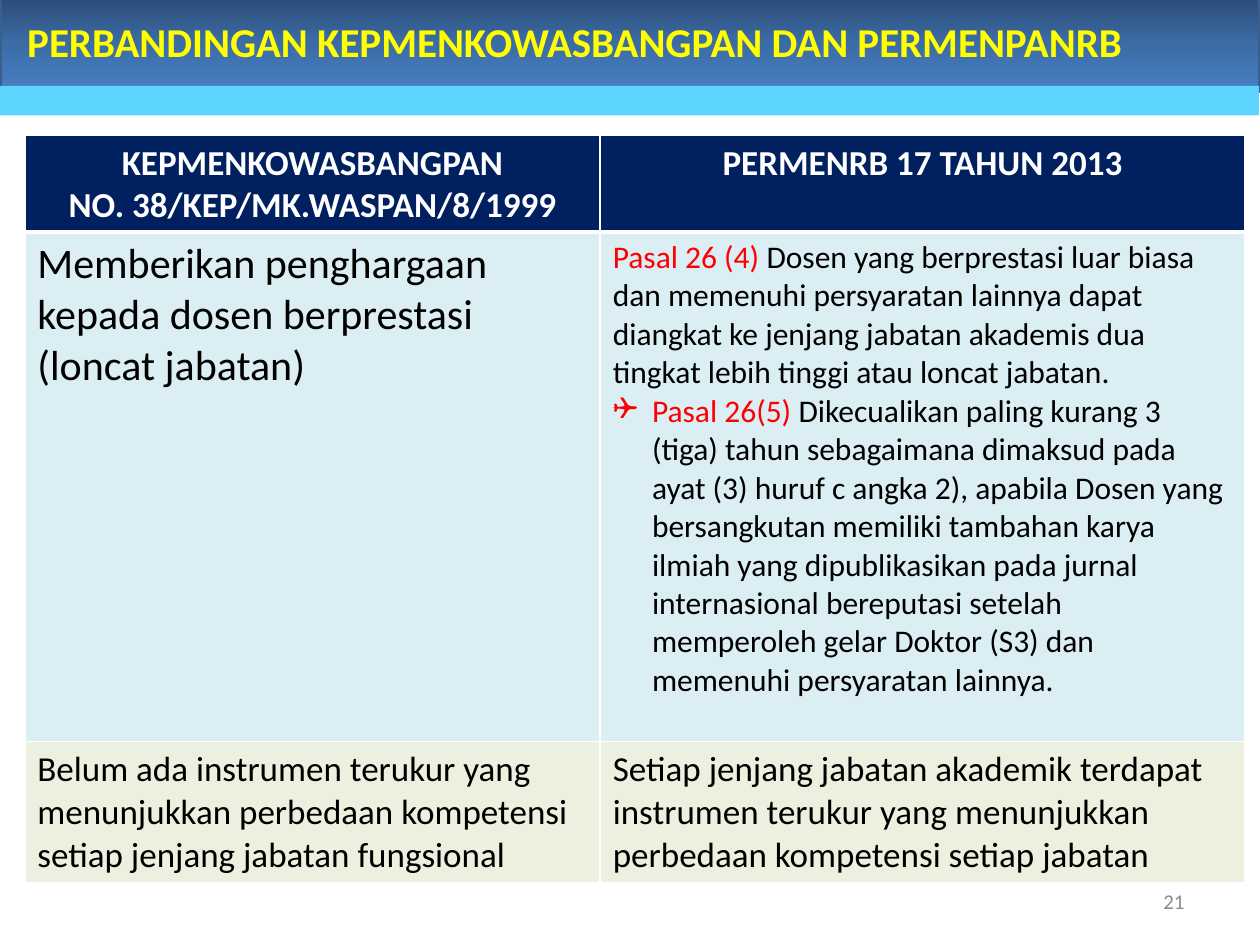
from copy import deepcopy
from dataclasses import dataclass

from lxml import etree
from pptx import Presentation
from pptx.dml.color import RGBColor
from pptx.enum import shapes, text
from pptx.oxml.ns import qn
from pptx.util import Cm, Pt


@dataclass(frozen=True)
class Theme:
    font: str = "Calibri"
    white: str = "FFFFFF"
    black: str = "000000"
    red: str = "FF0000"
    yellow: str = "FFFF00"
    gray: str = "8C8C8C"
    navy: str = "002060"
    blue: str = "DBEEF4"
    green: str = "EBF1DE"
    cyan: str = "5DD5FF"
    edge: str = "3A5F8C"
    fade: tuple = ("2A4C75", "3C6CA6", "4780C5")
    title: float = 23.4
    large: int = 24
    body: int = 20
    small: int = 18
    note: int = 12


T = Theme()
rgb = RGBColor.from_string


def write(frame, paras, size=T.body, color=T.black, bold=False,
          align=text.PP_ALIGN.LEFT, anchor=text.MSO_ANCHOR.TOP):
    """Fill a frame; each paragraph is a list of (words, colour or None)."""
    frame.word_wrap = True
    frame.vertical_anchor = anchor
    for i, parts in enumerate(paras):
        para = frame.paragraphs[0] if i == 0 else frame.add_paragraph()
        para.alignment = align
        for words, tint in parts:
            run = para.add_run()
            run.text = words
            run.font.name = T.font
            run.font.size = Pt(size)
            run.font.bold = bold
            run.font.color.rgb = rgb(tint or color)


def border(cell, widths):
    """Draw white cell edges; widths maps a side (L, R, T, B) to points."""
    props = cell._tc.get_or_add_tcPr()
    for n, (side, width) in enumerate(widths.items()):
        line = etree.Element(qn(f"a:ln{side}"), w=str(Pt(width)))
        fill = etree.SubElement(line, qn("a:solidFill"))
        etree.SubElement(fill, qn("a:srgbClr"), val=T.white)
        props.insert(n, line)


deck = Presentation()
deck.slide_width, deck.slide_height = Cm(25.4), Cm(19.05)
slide = deck.slides.add_slide(deck.slide_layouts[6])
rect = shapes.MSO_SHAPE.RECTANGLE

# Title banner and the stripe under it
banner = slide.shapes.add_shape(rect, 0, Cm(-0.08), Cm(25.4), Cm(1.93))
banner.shadow.inherit = False
banner.fill.gradient()
banner.fill.gradient_angle = 270
stops = banner.fill._fill._gradFill.find(qn("a:gsLst"))
stops.insert(1, deepcopy(stops[0]))
for stop, place, tint in zip(banner.fill.gradient_stops, (0, 0.5, 1), T.fade):
    stop.position = place
    stop.color.rgb = rgb(tint)
banner.line.color.rgb = rgb(T.edge)
banner.line.width = Pt(2)

stripe = slide.shapes.add_shape(rect, Cm(-0.05), Cm(1.73), Cm(25.43), Cm(0.6))
stripe.shadow.inherit = False
stripe.fill.solid()
stripe.fill.fore_color.rgb = rgb(T.cyan)
stripe.line.fill.background()

title = slide.shapes.add_textbox(Cm(0.3), Cm(-0.08), Cm(24), Cm(1.83))
write(title.text_frame, [[("PERBANDINGAN KEPMENKOWASBANGPAN DAN PERMENPANRB", None)]],
      size=T.title, color=T.yellow, bold=True, anchor=text.MSO_ANCHOR.MIDDLE)

# Comparison table
head = dict(color=T.white, bold=True, align=text.PP_ALIGN.CENTER)
rows = [
    (1.95, T.navy, [
        ([[("KEPMENKOWASBANGPAN", None)], [("NO. 38/KEP/MK.WASPAN/8/1999", None)]], head),
        ([[("PERMENRB 17 TAHUN 2013", None)]], head),
    ]),
    (10.27, T.blue, [
        ([[("Memberikan penghargaan kepada dosen berprestasi (loncat jabatan)", None)]],
         dict(size=T.large)),
        ([[("Pasal 26 (4) ", T.red),
           ("Dosen yang berprestasi luar biasa dan memenuhi persyaratan lainnya dapat "
            "diangkat ke jenjang jabatan akademis dua tingkat lebih tinggi atau "
            "loncat jabatan.", None)],
          [("Pasal 26(5) ", T.red),
           ("Dikecualikan paling kurang 3 (tiga) tahun sebagaimana dimaksud pada "
            "ayat (3) huruf c angka 2), apabila Dosen yang bersangkutan memiliki "
            "tambahan karya ilmiah yang dipublikasikan pada jurnal internasional "
            "bereputasi setelah memperoleh gelar Doktor (S3) dan memenuhi "
            "persyaratan lainnya.", None)]],
         dict(size=T.small)),
    ]),
    (2.84, T.green, [
        ([[("Belum ada instrumen terukur yang menunjukkan perbedaan kompetensi "
            "setiap jenjang jabatan fungsional", None)]], {}),
        ([[("Setiap jenjang jabatan akademik terdapat instrumen terukur yang "
            "menunjukkan perbedaan kompetensi setiap jabatan", None)]], {}),
    ]),
]
cols = (11.6, 13)
high = sum(row[0] for row in rows)
table = slide.shapes.add_table(len(rows), len(cols), Cm(0.5), Cm(2.73),
                               Cm(sum(cols)), Cm(high)).table
for col, width in zip(table.columns, cols):
    col.width = Cm(width)
for r, (height, shade, cells) in enumerate(rows):
    table.rows[r].height = Cm(height)
    for c, (paras, style) in enumerate(cells):
        cell = table.cell(r, c)
        cell.fill.solid()
        cell.fill.fore_color.rgb = rgb(shade)
        border(cell, dict(L=1, R=1, T=3 if r == 1 else 1, B=3 if r == 0 else 1))
        write(cell.text_frame, paras, **style)

# Box bullet on the second article
point = table.cell(1, 1).text_frame.paragraphs[1]
point.level = 3
props = point._p.get_or_add_pPr()
props.set("marL", str(Cm(0.79)))
props.set("indent", str(Cm(-0.79)))
etree.SubElement(props, qn("a:buFont"), typeface="Wingdings")
etree.SubElement(props, qn("a:buChar"), char="❑")

# Page number
page = slide.shapes.add_textbox(Cm(18.2), Cm(17.65), Cm(5.93), Cm(1.02))
write(page.text_frame, [[("21", None)]], size=T.note, color=T.gray,
      align=text.PP_ALIGN.RIGHT, anchor=text.MSO_ANCHOR.MIDDLE)

deck.save("out.pptx")
